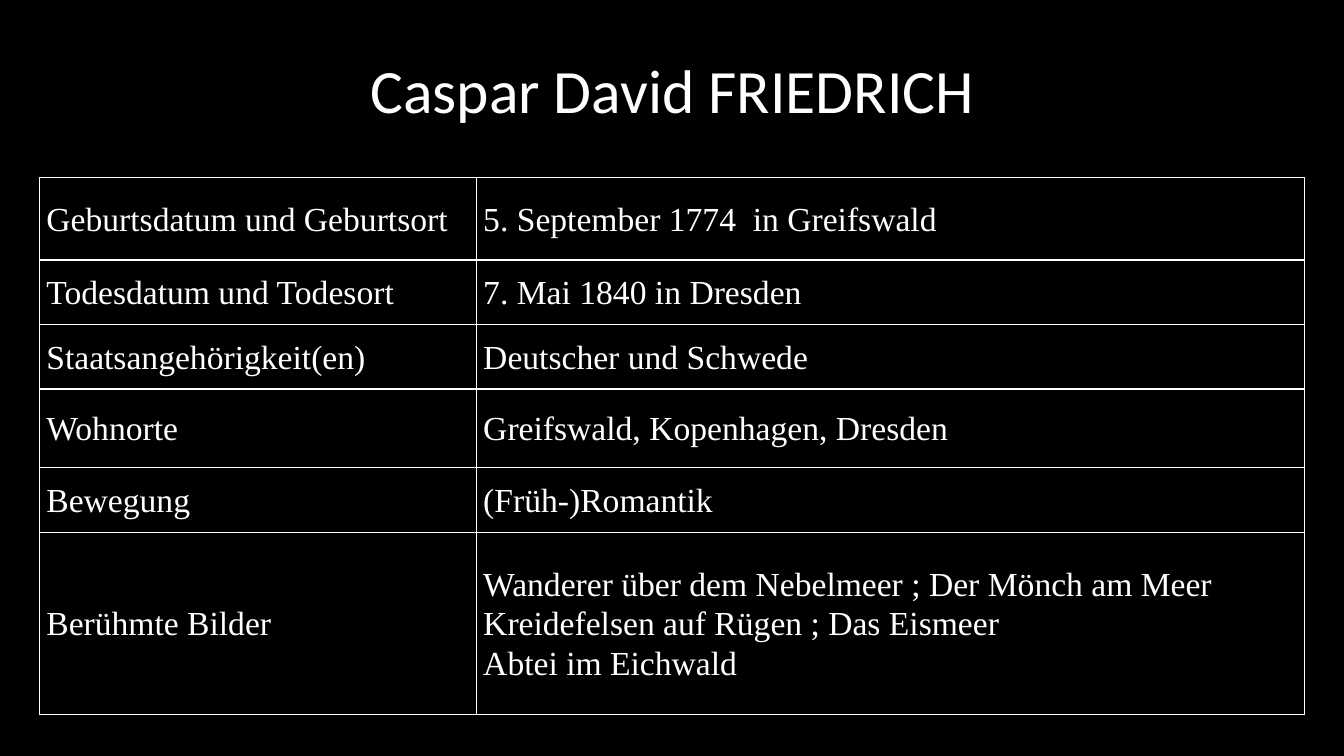
from lxml.etree import SubElement
from pptx import Presentation
from pptx.dml.color import RGBColor
from pptx.enum.text import MSO_ANCHOR, PP_ALIGN
from pptx.oxml.ns import qn
from pptx.util import Inches, Pt

BLACK = RGBColor(0x00, 0x00, 0x00)
WHITE = RGBColor(0xFF, 0xFF, 0xFF)

TITLE = "Caspar David FRIEDRICH"
FACTS = [
    ("Geburtsdatum und Geburtsort", "5. September 1774  in Greifswald", 0.82),
    ("Todesdatum und Todesort", "7. Mai 1840 in Dresden", 0.64),
    ("Staatsangehörigkeit(en)", "Deutscher und Schwede", 0.64),
    ("Wohnorte", "Greifswald, Kopenhagen, Dresden", 0.78),
    ("Bewegung", "(Früh-)Romantik", 0.64),
    ("Berühmte Bilder",
     "Wanderer über dem Nebelmeer ; Der Mönch am Meer\n"
     "Kreidefelsen auf Rügen ; Das Eismeer\n"
     "Abtei im Eichwald", 1.81),
]
LABEL_SHARE = 4.33 / 12.54

TITLE_FONT = {"name": "Calibri", "size": Pt(44)}
CELL_FONT = {"name": "Times New Roman", "size": Pt(24), "bold": False}
CELL_FORM = {
    "vertical_anchor": MSO_ANCHOR.MIDDLE,
    "margin_left": Inches(0.07),
    "margin_right": Inches(0.07),
    "margin_top": 0,
    "margin_bottom": 0,
}


def apply(item, form):
    for name, value in form.items():
        setattr(item, name, value)


def write(frame, text, font, para_form):
    """Fill a text frame, one paragraph for each line of text."""
    frame.text = text
    for para in frame.paragraphs:
        apply(para, para_form)
        for run in para.runs:
            apply(run.font, font)
            run.font.color.rgb = WHITE


def add_border(cell, widths):
    """Draw white cell sides; widths maps L, R, T and B to points."""
    props = cell._tc.get_or_add_tcPr()
    for side, width in widths.items():
        line = SubElement(props, qn(f"a:ln{side}"), w=str(Pt(width)))
        fill = SubElement(line, qn("a:solidFill"))
        SubElement(fill, qn("a:srgbClr"), val=str(WHITE))


def add_title(slide, left, top, width, height):
    box = slide.shapes.add_textbox(
        Inches(left), Inches(top), Inches(width), Inches(height))
    frame = box.text_frame
    apply(frame, {"word_wrap": True, "vertical_anchor": MSO_ANCHOR.MIDDLE})
    write(frame, TITLE, TITLE_FONT,
          {"alignment": PP_ALIGN.CENTER, "line_spacing": 0.9})


def add_facts(slide, left, top, width, height):
    table = slide.shapes.add_table(
        len(FACTS), 2, Inches(left), Inches(top),
        Inches(width), Inches(height)).table
    apply(table, {"first_row": False, "horz_banding": False})
    for col, share in zip(table.columns, (LABEL_SHARE, 1 - LABEL_SHARE)):
        col.width = Inches(width * share)
    total = sum(fact[2] for fact in FACTS)
    for index, (label, value, part) in enumerate(FACTS):
        row = table.rows[index]
        row.height = Inches(height * part / total)
        widths = {"L": 1, "R": 1,
                  "T": 1.5 if index == 1 else 1,
                  "B": 1.5 if index == 0 else 1}
        for cell, text in zip(row.cells, (label, value)):
            apply(cell, CELL_FORM)
            add_border(cell, widths)
            cell.fill.solid()
            cell.fill.fore_color.rgb = BLACK
            write(cell.text_frame, text, CELL_FONT, {"line_spacing": 1.07})


def main():
    deck = Presentation()
    apply(deck, {"slide_width": Inches(13.33), "slide_height": Inches(7.5)})
    slide = deck.slides.add_slide(deck.slide_layouts[6])
    back = slide.background.fill
    back.solid()
    back.fore_color.rgb = BLACK
    add_title(slide, 0.92, 0.4, 11.5, 1.06)
    add_facts(slide, 0.39, 1.76, 12.55, 5.33)
    deck.save("out.pptx")


if __name__ == "__main__":
    main()
